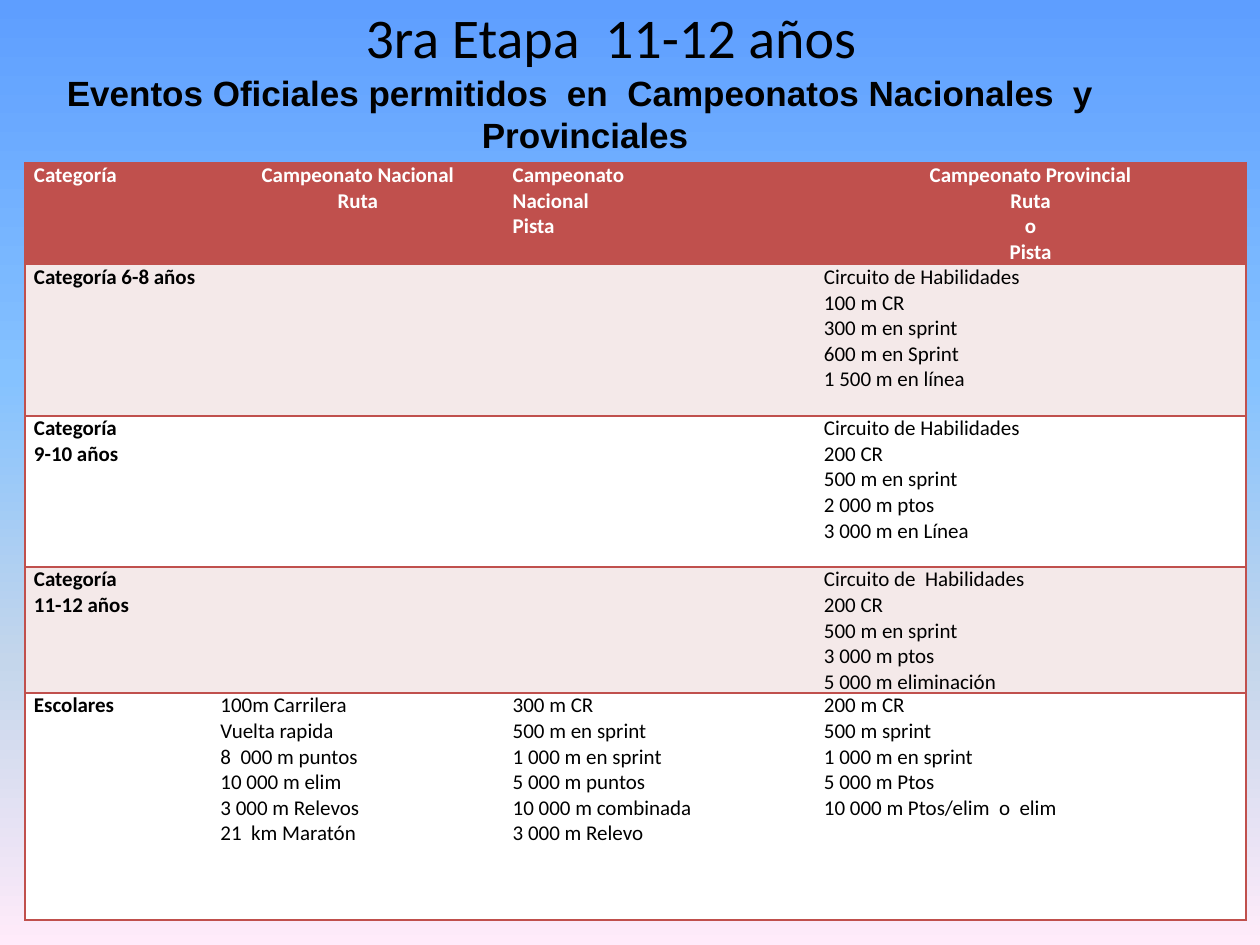
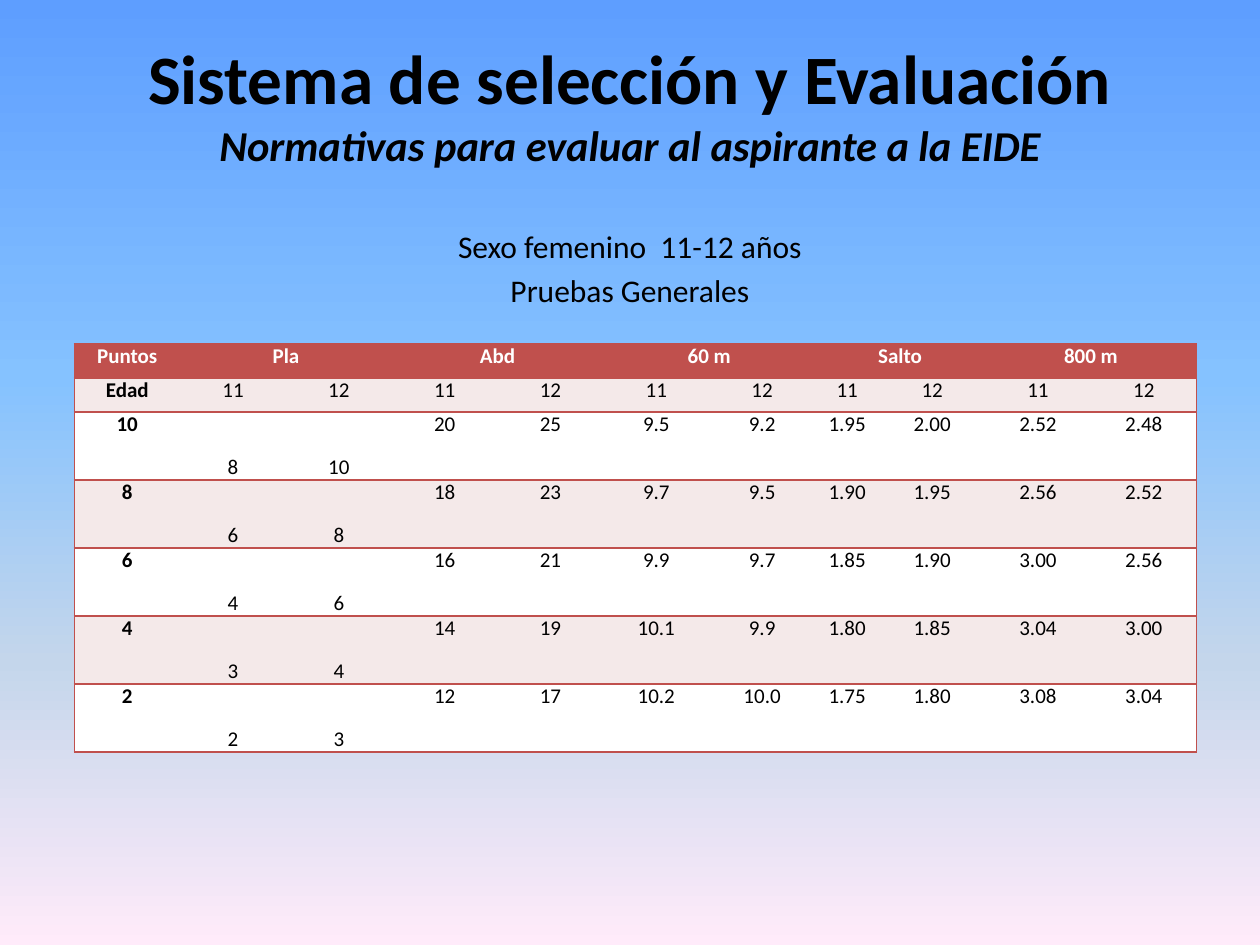
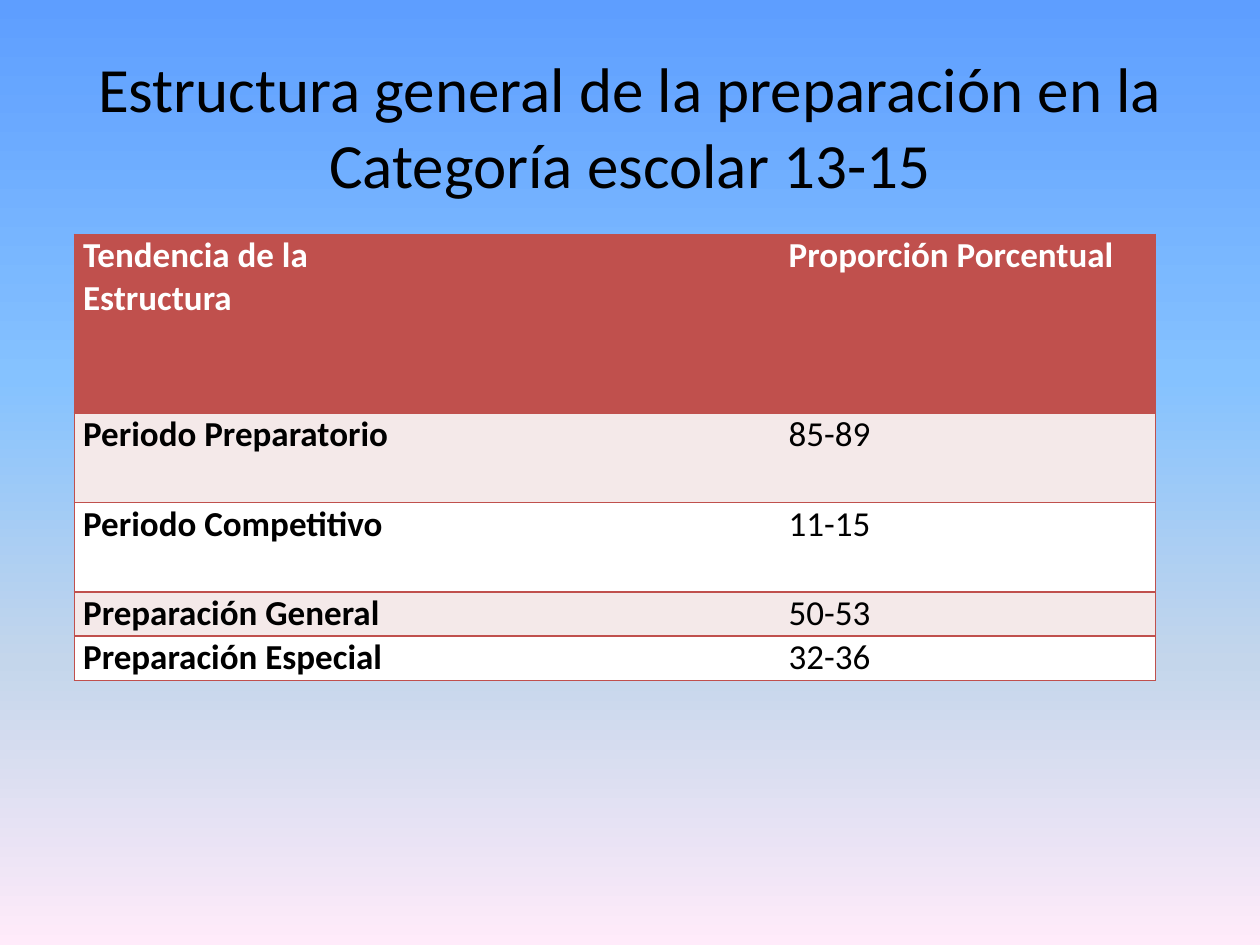
from lxml.etree import SubElement
from pptx import Presentation
from pptx.dml.color import RGBColor
from pptx.enum.text import MSO_ANCHOR, MSO_AUTO_SIZE, PP_ALIGN
from pptx.oxml.ns import qn
from pptx.util import Inches, Pt

BLACK = RGBColor(0x00, 0x00, 0x00)
WHITE = RGBColor(0xFF, 0xFF, 0xFF)
RED = RGBColor(0xC0, 0x50, 0x4D)
PINK = RGBColor(0xF4, 0xE9, 0xE9)
SKY = [(0, RGBColor(0x5E, 0x9E, 0xFF)), (40, RGBColor(0x85, 0xC2, 0xFF)),
       (70, RGBColor(0xC4, 0xD6, 0xEB)), (100, RGBColor(0xFF, 0xEB, 0xFA))]
NO_STYLE = "{2D5ABB26-0587-4C30-8999-92F81FD0307C}"


def format_text(tf, size, color=BLACK, bold=False, align=PP_ALIGN.CENTER, font="Calibri"):
    for p in tf.paragraphs:
        p.alignment = align
        for r in p.runs:
            r.font.name = font
            r.font.size = Pt(size)
            r.font.bold = bold
            r.font.color.rgb = color


def add_banded_table(s, left, top, widths, heights, data, size, align=PP_ALIGN.LEFT):
    frame = s.shapes.add_table(len(heights), len(widths), Inches(left), Inches(top),
                               Inches(sum(widths)), Inches(sum(heights)))
    table = frame.table
    next(frame._element.iter(qn("a:tableStyleId"))).text = NO_STYLE
    for col, width in zip(table.columns, widths):
        col.width = Inches(width)
    for row, height in zip(table.rows, heights):
        row.height = Inches(height)
    for i, values in enumerate(data):
        for j, value in enumerate(values):
            cell = table.cell(i, j)
            cell.text = value
            cell.margin_left = cell.margin_right = Inches(0.07)
            cell.margin_top = cell.margin_bottom = 0
            format_text(cell.text_frame, size, WHITE if i == 0 else BLACK,
                        i == 0 or j == 0, align)
            # Red rules between rows and around the table
            sides = ["lnL"] * (j == 0) + ["lnR"] * (j == len(widths) - 1) + ["lnT", "lnB"]
            for side in sides:
                ln = SubElement(cell._tc.get_or_add_tcPr(), qn(f"a:{side}"), w=str(Pt(1)))
                SubElement(SubElement(ln, qn("a:solidFill")), qn("a:srgbClr"), val=str(RED))
            cell.fill.solid()
            cell.fill.fore_color.rgb = RED if i == 0 else PINK if i % 2 else WHITE
    return table


prs = Presentation()
prs.slide_width, prs.slide_height = Inches(10), Inches(7.5)
TITLE_BODY, TITLE_ONLY = prs.slide_layouts[1], prs.slide_layouts[5]

# Shared sky gradient on the master
fill = prs.slide_master.background.fill
fill.gradient()
fill.gradient_angle = 270
stops = next(prs.slide_master._element.iter(qn("a:gsLst")))
for gs in list(stops):
    stops.remove(gs)
for pos, color in SKY:
    gs = SubElement(stops, qn("a:gs"), pos=str(pos * 1000))
    SubElement(gs, qn("a:srgbClr"), val=str(color))

# Titles
titles = [
    (TITLE_ONLY, "3ra Etapa  11-12 años", 0.35, -0.34, 32),
    (TITLE_BODY, "Sistema de selección y Evaluación\n"
                 "Normativas para evaluar al aspirante a la EIDE", 0.5, 0.19, 39.6),
    (TITLE_ONLY, "Estructura general de la preparación en la Categoría escolar 13-15",
     0.5, 0.37, 36),
]
for layout, text, left, top, size in titles:
    s = prs.slides.add_slide(layout)
    sp = s.shapes.title
    sp.left, sp.top, sp.width, sp.height = Inches(left), Inches(top), Inches(9), Inches(1.25)
    tf = sp.text_frame
    tf.text = text
    tf.auto_size = MSO_AUTO_SIZE.NONE
    tf.vertical_anchor = MSO_ANCHOR.MIDDLE
    format_text(tf, size)
events, norms, structure = prs.slides

# Slide 1: official events by category
sp = events.shapes.add_textbox(Inches(0.43), Inches(0.52), Inches(8.43), Inches(0.77))
tf = sp.text_frame
tf.word_wrap = True
tf.text = "Eventos Oficiales permitidos  en  Campeonatos Nacionales  y  Provinciales"
format_text(tf, 20, bold=True, font="Arial")

event_rows = [
    ["Categoría", "Campeonato Nacional\nRuta", "Campeonato\nNacional\nPista",
     "Campeonato Provincial\nRuta\no\nPista"],
    ["Categoría 6-8 años", "", "",
     "Circuito de Habilidades\n100 m CR\n300 m en sprint\n600 m en Sprint\n1 500 m en línea"],
    ["Categoría\n9-10 años", "", "",
     "Circuito de Habilidades\n200 CR\n500 m en sprint\n2 000 m ptos\n3 000 m en Línea"],
    ["Categoría\n11-12 años", "", "",
     "Circuito de  Habilidades\n200 CR\n500 m en sprint\n3 000 m ptos\n5 000 m eliminación"],
    ["Escolares",
     "100m Carrilera\nVuelta rapida\n8  000 m puntos\n10 000 m elim\n"
     "3 000 m Relevos\n21  km Maratón",
     "300 m CR\n500 m en sprint\n1 000 m en sprint\n5 000 m puntos\n"
     "10 000 m combinada\n3 000 m Relevo",
     "200 m CR\n500 m sprint\n1 000 m en sprint\n5 000 m Ptos\n10 000 m Ptos/elim  o  elim"],
]
table = add_banded_table(events, 0.2, 1.29, [1.48, 2.32, 2.47, 3.42],
                         [0.81, 1.2, 1.2, 1, 1.8], event_rows, 12)
for j in (1, 3):
    for p in table.cell(0, j).text_frame.paragraphs:
        p.alignment = PP_ALIGN.CENTER

# Slide 2: norms for girls aged 11 and 12
r = norms.shapes.title.text_frame.paragraphs[1].runs[0]
r.font.size = Pt(24.3)
r.font.italic = True
for r in [p.runs[0] for p in norms.shapes.title.text_frame.paragraphs]:
    r.font.bold = True

tf = norms.placeholders[1].text_frame
tf.text = "Sexo femenino  11-12 años\nPruebas Generales"
tf.auto_size = MSO_AUTO_SIZE.NONE
format_text(tf, 18)
for p in tf.paragraphs:
    pPr = p._p.get_or_add_pPr()
    pPr.set("marL", "0")
    pPr.set("indent", "0")
    SubElement(pPr, qn("a:buNone"))

norm_rows = [
    ["Puntos", "Pla", "", "Abd", "", "60 m", "", "Salto", "", "800 m", ""],
    ["Edad"] + ["11", "12"] * 5,
    ["10", "8", "10", "20", "25", "9.5", "9.2", "1.95", "2.00", "2.52", "2.48"],
    ["8", "6", "8", "18", "23", "9.7", "9.5", "1.90", "1.95", "2.56", "2.52"],
    ["6", "4", "6", "16", "21", "9.9", "9.7", "1.85", "1.90", "3.00", "2.56"],
    ["4", "3", "4", "14", "19", "10.1", "9.9", "1.80", "1.85", "3.04", "3.00"],
    ["2", "2", "3", "12", "17", "10.2", "10.0", "1.75", "1.80", "3.08", "3.04"],
]
table = add_banded_table(norms, 0.59, 2.73, [0.84] * 7 + [0.51] + [0.84] * 3,
                         [0.27] * 2 + [0.54] * 5, norm_rows, 12, PP_ALIGN.CENTER)
for j in range(1, 11, 2):
    table.cell(0, j).merge(table.cell(0, j + 1))
for i in range(2, 7):
    for j in (1, 2):
        table.cell(i, j).vertical_anchor = MSO_ANCHOR.BOTTOM

# Slide 3: share of each period and preparation
structure_rows = [
    ["Tendencia de la\nEstructura", "Proporción Porcentual"],
    ["Periodo Preparatorio", "85-89"],
    ["Periodo Competitivo", "11-15"],
    ["Preparación General", "50-53"],
    ["Preparación Especial", "32-36"],
]
add_banded_table(structure, 0.59, 1.86, [5.6, 2.98], [1.42, 0.71, 0.71, 0.35, 0.35],
                 structure_rows, 20)

prs.save("out.pptx")
